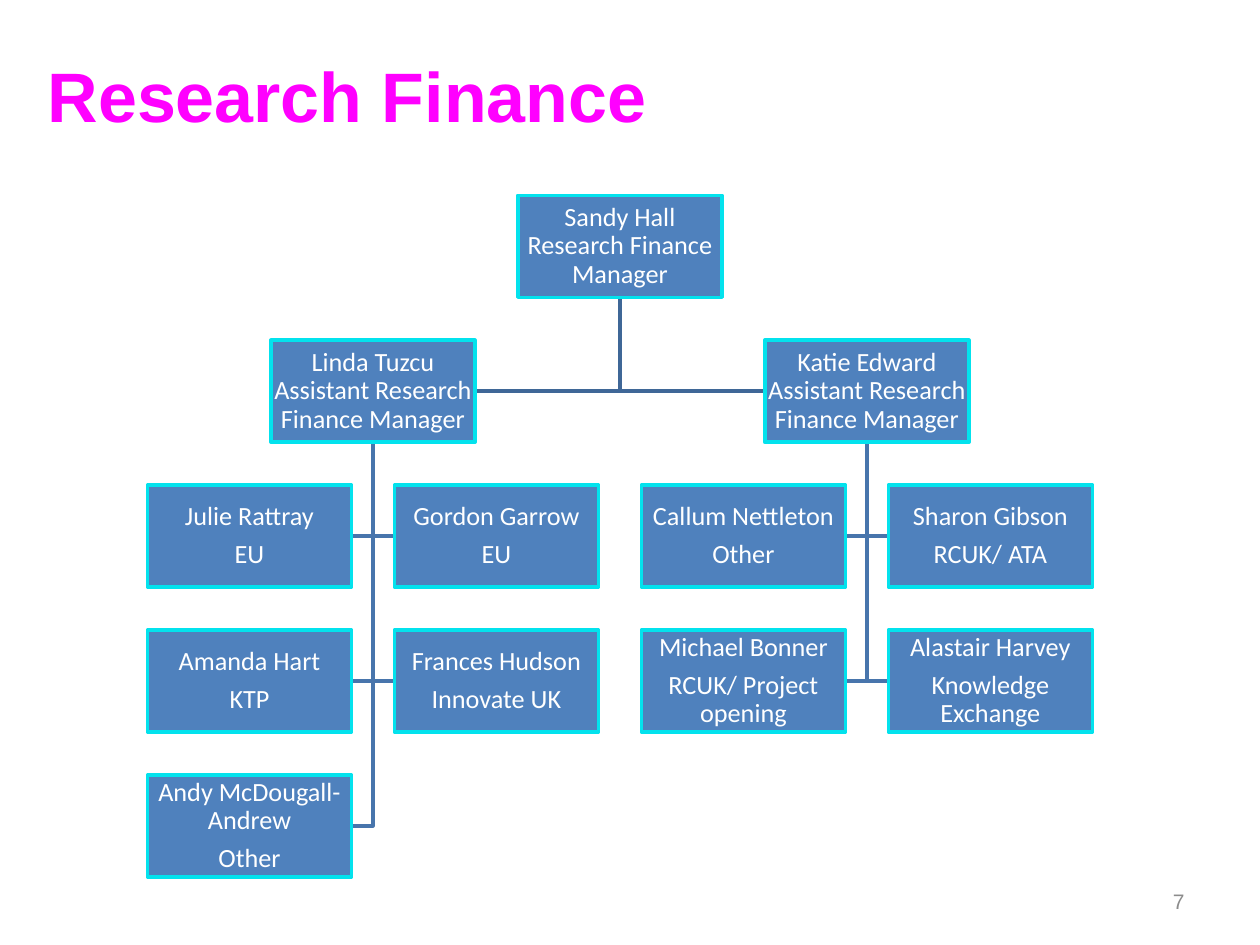
from typing import NamedTuple

from lxml import etree
from pptx import Presentation
from pptx.dml.color import RGBColor
from pptx.enum.shapes import MSO_SHAPE
from pptx.enum.text import MSO_ANCHOR, PP_ALIGN
from pptx.util import Inches, Pt

RECT = MSO_SHAPE.RECTANGLE
LEFT, MID, RIGHT = PP_ALIGN.LEFT, PP_ALIGN.CENTER, PP_ALIGN.RIGHT
CENTER, BOTTOM = MSO_ANCHOR.MIDDLE, MSO_ANCHOR.BOTTOM

PINK = RGBColor(0xFF, 0x00, 0xFF)
GRAY = RGBColor(0x8C, 0x8C, 0x8C)
WHITE = RGBColor(0xFF, 0xFF, 0xFF)
BLUE = RGBColor(0x4F, 0x81, 0xBD)
CYAN = RGBColor(0x03, 0xE2, 0xED)
DARK = RGBColor(0x3F, 0x67, 0x97)
STEEL = RGBColor(0x48, 0x75, 0xAC)

# Chart grid, in inches: columns are half a box pitch apart
X0, Y0 = 1.17, 1.55
STEP_X, STEP_Y = 0.98, 1.15
WIDTH, HEIGHT = 1.62, 0.81


class Person(NamedTuple):
    col: int
    row: int
    lines: tuple[str, ...]

    @property
    def left(self) -> float:
        return X0 + self.col * STEP_X

    @property
    def top(self) -> float:
        return Y0 + self.row * STEP_Y


class Team(NamedTuple):
    lead: Person
    staff: tuple[Person, ...]


HEAD = Person(3, 0, ("Sandy Hall Research Finance Manager",))
TEAMS = (
    Team(Person(1, 1, ("Linda Tuzcu Assistant Research Finance Manager",)), (
        Person(0, 2, ("Julie Rattray", "EU")),
        Person(2, 2, ("Gordon Garrow", "EU")),
        Person(0, 3, ("Amanda Hart", "KTP")),
        Person(2, 3, ("Frances Hudson", "Innovate UK")),
        Person(0, 4, ("Andy McDougall-Andrew", "Other")),
    )),
    Team(Person(5, 1, ("Katie Edward Assistant Research Finance Manager",)), (
        Person(4, 2, ("Callum Nettleton", "Other")),
        Person(6, 2, ("Sharon Gibson", "RCUK/ ATA")),
        Person(4, 3, ("Michael Bonner", "RCUK/ Project opening")),
        Person(6, 3, ("Alastair Harvey", "Knowledge Exchange")),
    )),
)


def write(shape, *lines: str, size: float, color: RGBColor, font="Arial",
          bold=False, align=LEFT, anchor=CENTER, inset=None,
          pitch=None, after=None) -> None:
    frame = shape.text_frame
    frame.word_wrap = True
    frame.vertical_anchor = anchor
    if inset is not None:
        frame.margin_left = frame.margin_right = Inches(inset)
        frame.margin_top = frame.margin_bottom = Inches(inset)
    for i, line in enumerate(lines):
        para = frame.paragraphs[0] if i == 0 else frame.add_paragraph()
        para.alignment = align
        para.line_spacing = pitch
        para.space_after = after
        run = para.add_run()
        run.text = line
        run.font.name = font
        run.font.size = Pt(size)
        run.font.bold = bold
        run.font.color.rgb = color


def link(shapes, boss: Person, child: Person, color: RGBColor) -> None:
    """Draw an elbow from under the boss to the near side of the child."""
    x = boss.left + WIDTH / 2
    y = child.top + HEIGHT / 2
    side = child.left + (WIDTH if child.col < boss.col else 0)
    path = shapes.build_freeform(Inches(x), Inches(boss.top + HEIGHT))
    path.add_line_segments(
        [(Inches(x), Inches(y)), (Inches(side), Inches(y))], close=False)
    elbow = path.convert_to_shape()
    elbow.shadow.inherit = False
    elbow.fill.background()
    elbow.line.color.rgb = color
    elbow.line.width = Pt(2)


def box(shapes, who: Person) -> None:
    card = shapes.add_shape(RECT, Inches(who.left), Inches(who.top),
                            Inches(WIDTH), Inches(HEIGHT))
    card.shadow.inherit = False
    card.fill.solid()
    card.fill.fore_color.rgb = BLUE
    card.line.color.rgb = CYAN
    card.line.width = Pt(2)
    write(card, *who.lines, size=15, color=WHITE, font="Calibri",
          align=MID, inset=0.01, pitch=0.9, after=Pt(5.25))


def main() -> None:
    deck = Presentation()
    deck.slide_width, deck.slide_height = Inches(10), Inches(7.5)
    shapes = deck.slides.add_slide(deck.slide_layouts[6]).shapes

    # Title and page number
    title = shapes.add_textbox(Inches(0.28), Inches(0.29),
                               Inches(7.87), Inches(0.84))
    write(title, "Research Finance", size=40, color=PINK, bold=True,
          anchor=BOTTOM)
    page = shapes.add_textbox(Inches(7.17), Inches(6.95),
                              Inches(2.33), Inches(0.4))
    write(page, "7", size=12, color=GRAY, align=RIGHT)

    # Links lie behind the boxes
    for team in TEAMS:
        link(shapes, HEAD, team.lead, DARK)
        for who in team.staff:
            link(shapes, team.lead, who, STEEL)

    # Boxes
    box(shapes, HEAD)
    for team in TEAMS:
        for who in (team.lead, *team.staff):
            box(shapes, who)

    deck.save("out.pptx")


if __name__ == "__main__":
    main()
